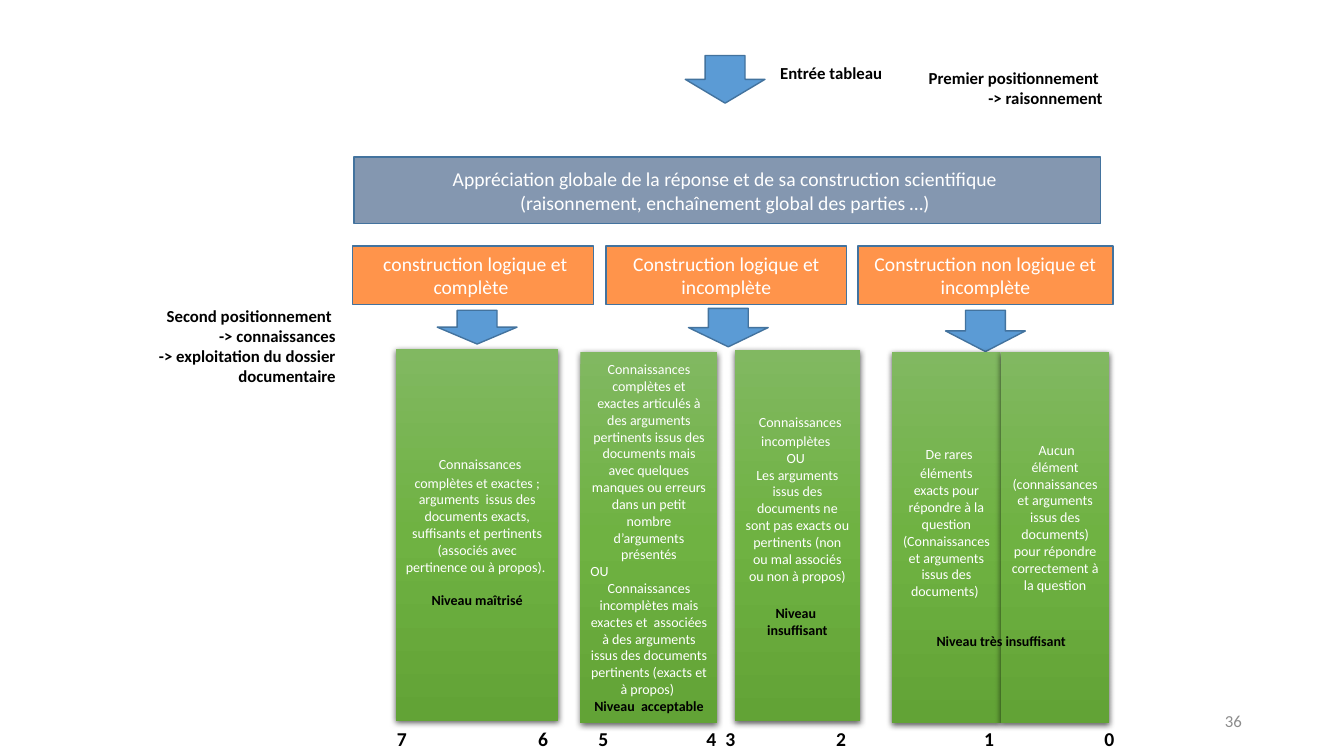
import copy

import lxml.etree
import pptx
import pptx.dml.color
import pptx.enum.shapes
import pptx.enum.text
import pptx.oxml
import pptx.oxml.ns
import pptx.util

Cm = pptx.util.Cm
Pt = pptx.util.Pt
RGBColor = pptx.dml.color.RGBColor
SHAPE = pptx.enum.shapes.MSO_SHAPE
ALIGN = pptx.enum.text.PP_ALIGN
ANCHOR = pptx.enum.text.MSO_ANCHOR
qn = pptx.oxml.ns.qn

FONT = "Calibri"
BLACK = RGBColor(0x00, 0x00, 0x00)
WHITE = RGBColor(0xFF, 0xFF, 0xFF)
GRAY = RGBColor(0x8C, 0x8C, 0x8C)
BLUE = RGBColor(0x5B, 0x9B, 0xD5)
BLUE_LINE = RGBColor(0x43, 0x73, 0x9E)
SLATE = RGBColor(0x84, 0x97, 0xB0)
ORANGE = RGBColor(0xFF, 0x94, 0x4B)
GREENS = (RGBColor(0x81, 0xB8, 0x61), RGBColor(0x6F, 0xB2, 0x42), RGBColor(0x62, 0xA3, 0x36))

SHADOW = (
    '<a:outerShdw xmlns:a="http://schemas.openxmlformats.org/drawingml/2006/main" '
    'blurRad="57150" dist="19050" dir="5400000" algn="ctr" rotWithShape="0">'
    '<a:srgbClr val="000000"><a:alpha val="63000"/></a:srgbClr></a:outerShdw>'
)

presentation = pptx.Presentation()
presentation.slide_width = Cm(33.87)
presentation.slide_height = Cm(19.05)
slide = presentation.slides.add_slide(presentation.slide_layouts[6])


def add_block(preset, left, top, width, height, fill=None):
    """Add a shape without shadow; a plain fill also brings the blue outline."""
    shape = slide.shapes.add_shape(preset, Cm(left), Cm(top), Cm(width), Cm(height))
    shape.shadow.inherit = False
    if fill is None:
        shape.line.fill.background()
    else:
        shape.fill.solid()
        shape.fill.fore_color.rgb = fill
        shape.line.color.rgb = BLUE_LINE
        shape.line.width = Pt(1)
    return shape


def write(shape, lines, size, color, bold=False, align=ALIGN.CENTER, anchor=ANCHOR.MIDDLE):
    frame = shape.text_frame
    frame.word_wrap = True
    frame.vertical_anchor = anchor
    frame.text = "\n".join(lines)
    for paragraph in frame.paragraphs:
        paragraph.alignment = align
        for run in paragraph.runs:
            run.font.name = FONT
            run.font.size = Pt(size)
            run.font.bold = bold
            run.font.color.rgb = color


# Entry, overall appraisal and the three kinds of construction
for left, top, height in ((17.27, 1.4, 1.2), (11.02, 7.82, 0.85), (17.35, 7.77, 0.97), (23.83, 7.82, 1.04)):
    add_block(SHAPE.DOWN_ARROW, left, top, 2.01, height, BLUE)

appraisal = add_block(SHAPE.RECTANGLE, 8.92, 3.96, 18.82, 1.68, SLATE)
write(appraisal, (
    "Appréciation globale de la réponse et de sa construction scientifique ",
    "(raisonnement, enchaînement global des parties …) ",
), 14, WHITE)

for left, width, text in (
    (8.89, 6.07, " construction logique et complète "),
    (15.27, 6.07, "Construction logique et incomplète"),
    (21.62, 6.43, "Construction non logique et incomplète"),
):
    write(add_block(SHAPE.RECTANGLE, left, 6.2, width, 1.47, ORANGE), (text,), 14, WHITE)

# Level columns: left, top, width, tall first line, space under the text (pt), gap above the level (pt), texts, level
COLUMNS = (
    (9.98, 8.79, 4.09, True, 12, 12, (
        "Connaissances complètes et exactes ; arguments  issus des documents exacts, "
        "suffisants et pertinents (associés avec pertinence ou à propos). ",
    ), "Niveau maîtrisé"),
    (14.63, 8.86, 3.45, False, 0, 0, (
        "Connaissances complètes et exactes articulés à des arguments pertinents issus des documents "
        "mais avec quelques manques ou erreurs dans un petit nombre d’arguments présentés",
        "OU",
        "Connaissances incomplètes mais exactes et  associées à des arguments issus des documents "
        "pertinents (exacts et à propos) ",
    ), "Niveau  acceptable"),
    (18.52, 8.81, 3.15, True, 22, 14.5, (
        "Connaissances incomplètes ",
        "OU ",
        "Les arguments issus des documents ne sont pas exacts ou pertinents "
        "(non ou mal associés ou non à propos)",
    ), "Niveau  insuffisant"),
    (22.48, 8.86, 2.74, True, 29, 0, (
        "De rares éléments exacts pour répondre à la question "
        "(Connaissances et arguments issus des documents) ",
    ), None),
    (25.22, 8.86, 2.74, False, 29, 0, (
        " Aucun élément (connaissances et arguments issus des documents) "
        "pour répondre correctement à la question",
    ), None),
)

for left, top, width, tall_start, space_under, level_gap, texts, level in COLUMNS:
    column = add_block(SHAPE.RECTANGLE, left, top, width, 9.37)
    column.fill.gradient()
    column.fill.gradient_angle = 270
    properties = column.element.spPr
    stop_list = properties.find(".//" + qn("a:gsLst"))
    stop_list.append(copy.deepcopy(stop_list[0]))
    for stop, position, green in zip(column.fill.gradient_stops, (0, 0.5, 1), GREENS):
        stop.position = position
        stop.color.rgb = green
    properties.find(qn("a:effectLst")).append(pptx.oxml.parse_xml(SHADOW))

    write(column, texts + ((level,) if level else ()), 10, WHITE)
    column.text_frame.margin_bottom = Pt(3.6 + space_under)
    paragraphs = column.text_frame.paragraphs
    if tall_start:
        text_run = paragraphs[0].runs[0]
        tall_space = copy.deepcopy(text_run._r)
        text_run._r.addprevious(tall_space)
        paragraphs[0].runs[0].text = " "
        paragraphs[0].runs[0].font.size = Pt(18)
    for paragraph in paragraphs:
        if paragraph.text == "OU":
            paragraph.alignment = ALIGN.LEFT
    if level:
        paragraphs[-1].space_before = Pt(level_gap)
        level_font = paragraphs[-1].runs[0].font
        level_font.bold = True
        level_font.color.rgb = BLACK

# Labels: left, top, width, height, lines, size, alignment
for left, top, width, height, lines, size, align in (
    (19.41, 1.45, 4.8, 0.76, ("Entrée tableau",), 12, ALIGN.LEFT),
    (22.15, 1.57, 5.89, 1.27, ("Premier positionnement ", "-> raisonnement"), 12, ALIGN.RIGHT),
    (3.53, 7.57, 5.18, 2.31, (
        "Second positionnement ", "-> connaissances", "-> exploitation du dossier documentaire",
    ), 12, ALIGN.RIGHT),
    (23.06, 15.82, 4.34, 0.69, ("Niveau très insuffisant",), 10, ALIGN.CENTER),
):
    label = slide.shapes.add_textbox(Cm(left), Cm(top), Cm(width), Cm(height))
    write(label, lines, size, BLACK, True, align, ANCHOR.TOP)

# Marks from 7 to 0, each placed at a tab stop
marks = slide.shapes.add_textbox(Cm(9.75), Cm(18.19), Cm(20.5), Cm(0.86))
write(marks, ("\t".join("76543210"),), 14, BLACK, True, ALIGN.LEFT, ANCHOR.TOP)
tab_list = lxml.etree.SubElement(
    marks.text_frame.paragraphs[0]._p.get_or_add_pPr(), qn("a:tabLst"))
for position in (3.56, 5.08, 7.8, 8.28, 11.07, 14.8, 17.83):
    lxml.etree.SubElement(tab_list, qn("a:tab"), pos=str(int(Cm(position))), algn="l")

slide_number = slide.shapes.add_textbox(Cm(23.93), Cm(17.65), Cm(7.62), Cm(1.02))
write(slide_number, ("36",), 12, GRAY, align=ALIGN.RIGHT)

presentation.save("out.pptx")
